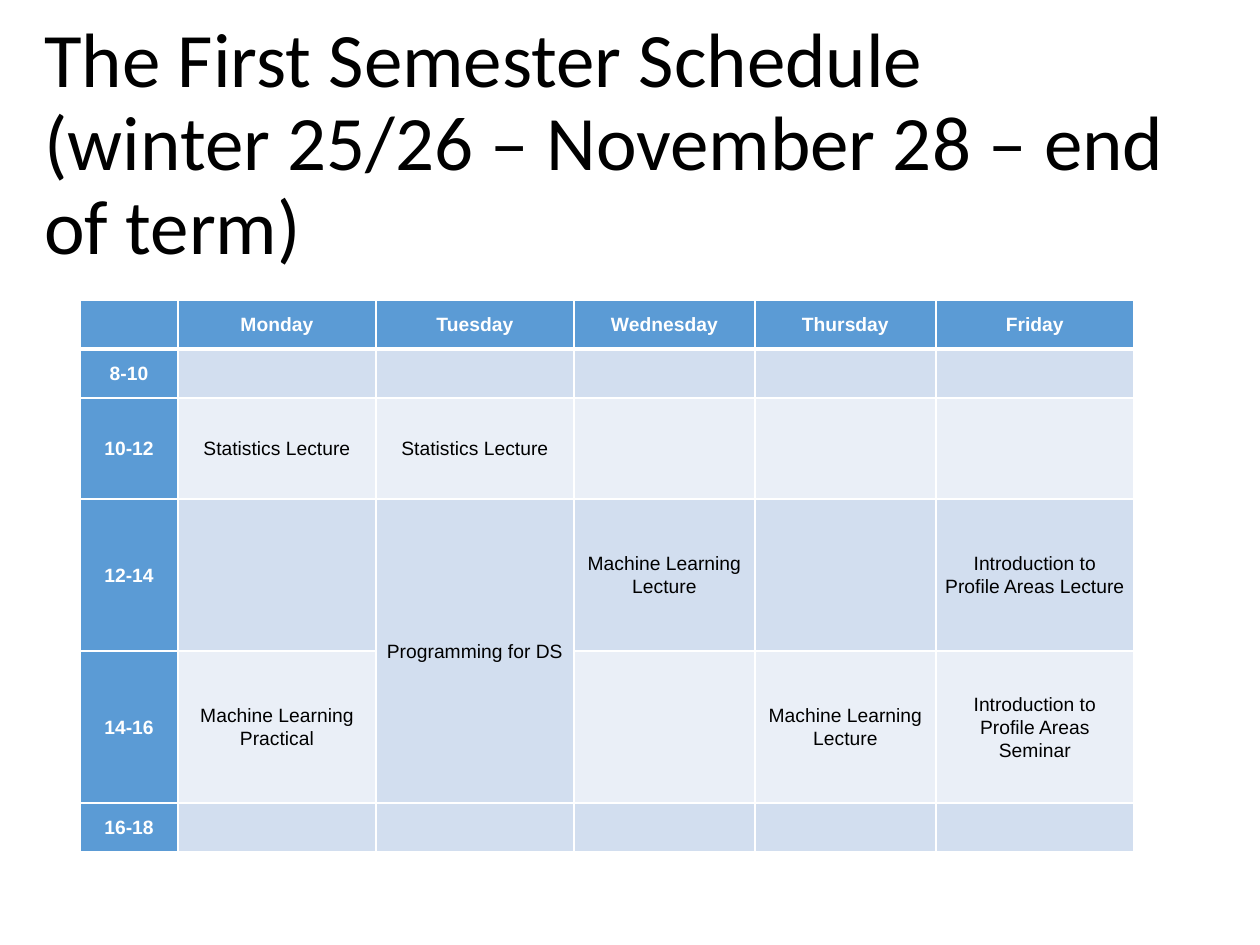
from lxml import etree
from pptx import Presentation
from pptx import util as u
from pptx.dml.color import RGBColor
from pptx.enum import text
from pptx.oxml.ns import qn

# Content
TITLE = "The First Semester Schedule\v(winter 25/26 – November 28 – end of term)"
SCHEDULE = [
    ["", "Monday", "Tuesday", "Wednesday", "Thursday", "Friday"],
    ["8-10", "", "", "", "", ""],
    ["10-12", "Statistics Lecture", "Statistics Lecture", "", "", ""],
    ["12-14", "", "Programming for DS", "Machine Learning Lecture", "",
     "Introduction to Profile Areas Lecture"],
    ["14-16", "Machine Learning Practical", "", "", "Machine Learning Lecture",
     "Introduction to Profile Areas Seminar"],
    ["16-18", "", "", "", "", ""],
]
DOUBLE_SLOT = ((3, 2), (4, 2))  # first and last cell of the merged slot
COLORS = {"head": "5B9BD5", "odd": "D2DEEF", "even": "EAEFF7",
          "white": "FFFFFF", "black": "000000"}

# Layout in px
PX = u.Inches(1) / 126
COLS = [98, 198, 198, 181, 181, 198]
ROWS = [49, 49, 101, 152, 152, 49]


def px(n):
    return u.Emu(round(n * PX))


def write(tf, words, size, font, color, bold=False, align=text.PP_ALIGN.LEFT,
          spacing=1.0, after=0):
    p = tf.paragraphs[0]
    p.text = words
    p.alignment, p.line_spacing = align, spacing
    p.space_before, p.space_after = u.Pt(0), u.Pt(after)
    for r in p.runs:
        r.font.size, r.font.name, r.font.bold = u.Pt(size), font, bold
        r.font.color.rgb = RGBColor.from_string(COLORS[color])


def add_borders(cell, **widths):
    tc_pr = cell._tc.get_or_add_tcPr()
    for side in "LRTB":
        ln = etree.SubElement(tc_pr, qn(f"a:ln{side}"),
                              w=str(u.Pt(widths.get(side, 1))))
        fill = etree.SubElement(ln, qn("a:solidFill"))
        etree.SubElement(fill, qn("a:srgbClr"), val=COLORS["white"])


prs = Presentation()
prs.slide_width, prs.slide_height = px(1260), px(945)
slide = prs.slides.add_slide(prs.slide_layouts[6])

# Title
tf = slide.shapes.add_textbox(px(32), px(34), px(1166), px(224)).text_frame
tf.word_wrap = True
tf.vertical_anchor = text.MSO_ANCHOR.MIDDLE
write(tf, TITLE, 44, "Calibri", "black", spacing=0.9)

# Timetable
table = slide.shapes.add_table(len(ROWS), len(COLS), px(80), px(300),
                               px(sum(COLS)), px(sum(ROWS))).table
table.horz_banding = False
for column, width in zip(table.columns, COLS):
    column.width = px(width)
for row, height in zip(table.rows, ROWS):
    row.height = px(height)

first, last = DOUBLE_SLOT
table.cell(*first).merge(table.cell(*last))

for i, line in enumerate(SCHEDULE):
    for j, words in enumerate(line):
        cell = table.cell(i, j)
        head = i == 0 or j == 0
        band = "odd" if i % 2 or cell.is_spanned else "even"
        add_borders(cell, T=3 if i == 1 else 1, B=3 if i == 0 else 1)
        cell.fill.solid()
        cell.fill.fore_color.rgb = RGBColor.from_string(
            COLORS["head" if head else band])
        cell.vertical_anchor = text.MSO_ANCHOR.MIDDLE
        cell.margin_left = cell.margin_right = px(9)
        cell.margin_top = cell.margin_bottom = 0
        if words:
            write(cell.text_frame, words, 11, "Arial",
                  "white" if head else "black", bold=head,
                  align=text.PP_ALIGN.CENTER, spacing=1.07, after=8)

prs.save("out.pptx")
